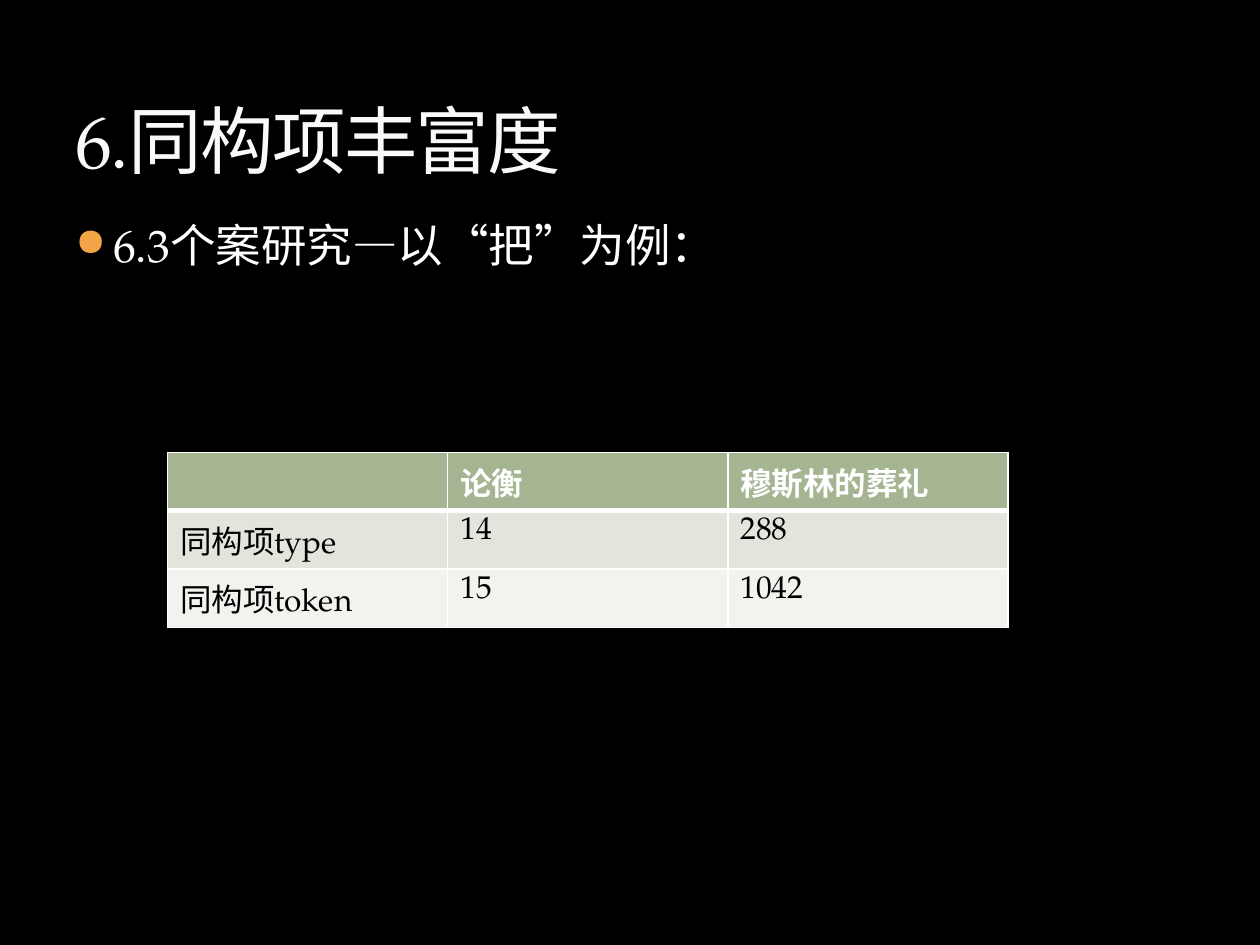
import pptx
import pptx.dml.color
import pptx.enum.text
import pptx.oxml
import pptx.oxml.ns
import pptx.util
from pptx.util import Inches

FONT = "TeX Gyre Pagella"
WHITE = "FFFFFF"
HEADER_FILL = "A5B592"
ROW_FILLS = ["E1E5DC", "F0F3EE"]
TABLE_ROWS = [
    ["", "论衡", "穆斯林的葬礼"],
    ["同构项type", "14", "288"],
    ["同构项token", "15", "1042"],
]


def color(value):
    return pptx.dml.color.RGBColor.from_string(value)


def xml_element(markup):
    """Parse markup whose root tag has the a: prefix."""
    tag, rest = markup.split(" ", 1)
    return pptx.oxml.parse_xml(f"{tag} {pptx.oxml.ns.nsdecls('a')} {rest}")


def write_run(paragraph, text, size, font_color, bold=False):
    run = paragraph.add_run()
    run.text = text
    formats = {"name": FONT, "size": pptx.util.Pt(size), "bold": bold}
    for attribute, value in formats.items():
        setattr(run.font, attribute, value)
    run.font.color.rgb = color(font_color)
    return run


def add_text_box(slide, box, anchor):
    frame = slide.shapes.add_textbox(*box).text_frame
    formats = {"word_wrap": True, "vertical_anchor": anchor}
    for attribute, value in formats.items():
        setattr(frame, attribute, value)
    return frame


def add_title(slide, box):
    frame = add_text_box(slide, box, pptx.enum.text.MSO_ANCHOR.BOTTOM)
    run = write_run(frame.paragraphs[0], "6.同构项丰富度", 42, "F9F9F9")
    run.font._element.set("spc", "-100")


def add_body(slide, box):
    frame = add_text_box(slide, box, pptx.enum.text.MSO_ANCHOR.TOP)
    paragraph = frame.paragraphs[0]
    paragraph.space_before = pptx.util.Pt(6)
    properties = paragraph._p.get_or_add_pPr()
    properties.set("marL", str(Inches(0.3)))
    properties.set("indent", str(Inches(-0.3)))
    for markup in (
        '<a:buClr ><a:srgbClr val="F3A447"/></a:buClr>',
        '<a:buSzPct val="85000"/>',
        '<a:buChar char="●"/>',
    ):
        properties.append(xml_element(markup))
    write_run(paragraph, "6.3个案研究—以“把”为例：", 26, WHITE)


def set_borders(cell, widths):
    """Draw white borders, with widths in points keyed by side L, R, T, B."""
    properties = cell._tc.get_or_add_tcPr()
    for index, (side, width) in enumerate(widths.items()):
        line = xml_element(
            f'<a:ln{side} w="{pptx.util.Pt(width)}"><a:solidFill>'
            f'<a:srgbClr val="{WHITE}"/></a:solidFill></a:ln{side}>'
        )
        properties.insert(index, line)


def add_count_table(slide, box):
    row_count, column_count = len(TABLE_ROWS), len(TABLE_ROWS[0])
    table = slide.shapes.add_table(row_count, column_count, *box).table
    for row_index, texts in enumerate(TABLE_ROWS):
        is_header = row_index == 0
        fill = HEADER_FILL if is_header else ROW_FILLS[row_index - 1]
        widths = {
            "L": 1,
            "R": 1,
            "T": 3 if row_index == 1 else 1,
            "B": 3 if is_header else 1,
        }
        for column_index, text in enumerate(texts):
            cell = table.cell(row_index, column_index)
            cell.fill.solid()
            cell.fill.fore_color.rgb = color(fill)
            set_borders(cell, widths)
            if text:
                paragraph = cell.text_frame.paragraphs[0]
                font_color = WHITE if is_header else "000000"
                write_run(paragraph, text, 18, font_color, is_header)


def main():
    presentation = pptx.Presentation()
    presentation.slide_width = Inches(10)
    presentation.slide_height = Inches(7.5)
    slide = presentation.slides.add_slide(presentation.slide_layouts[6])
    slide.background.fill.solid()
    slide.background.fill.fore_color.rgb = color("000000")
    add_body(slide, (Inches(0.5), Inches(1.67), Inches(9), Inches(5)))
    add_title(slide, (Inches(0.5), Inches(0.17), Inches(9), Inches(1.33)))
    add_count_table(slide, (Inches(1.33), Inches(3.59), Inches(6.67), Inches(1.39)))
    presentation.save("out.pptx")


if __name__ == "__main__":
    main()
